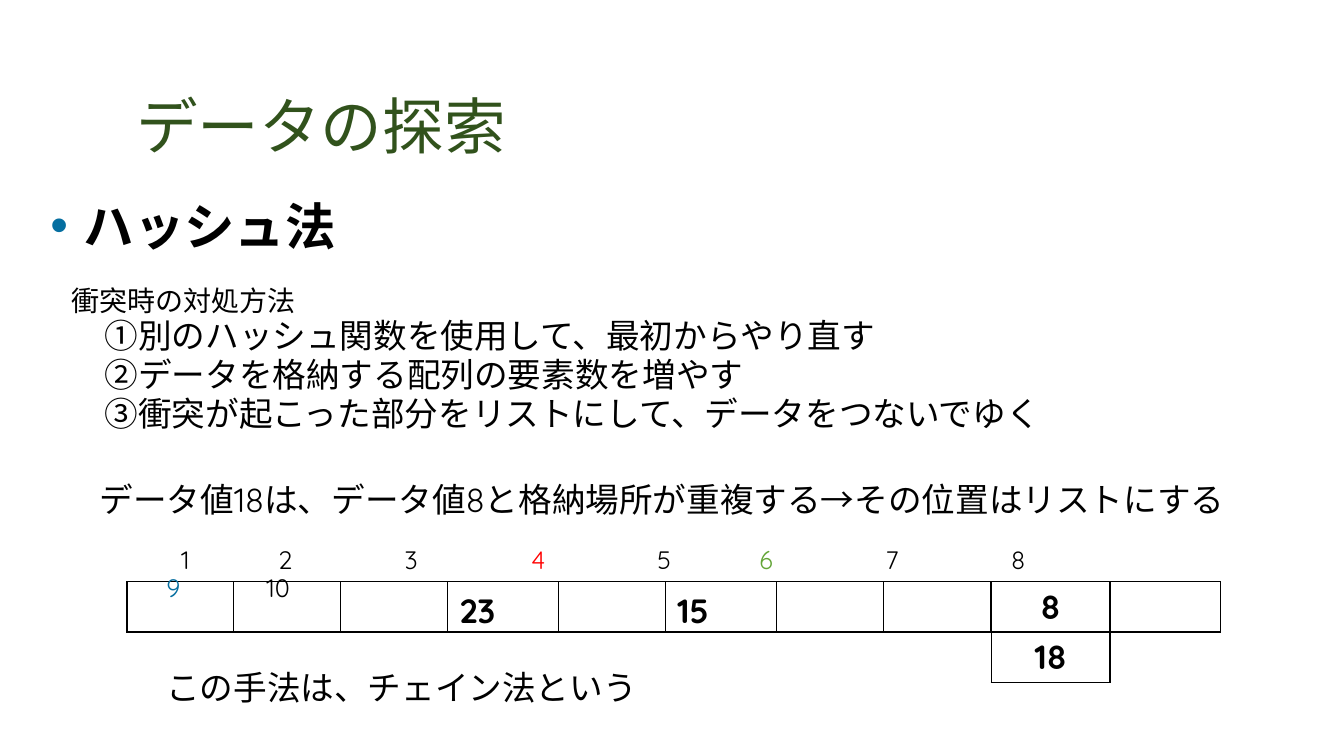
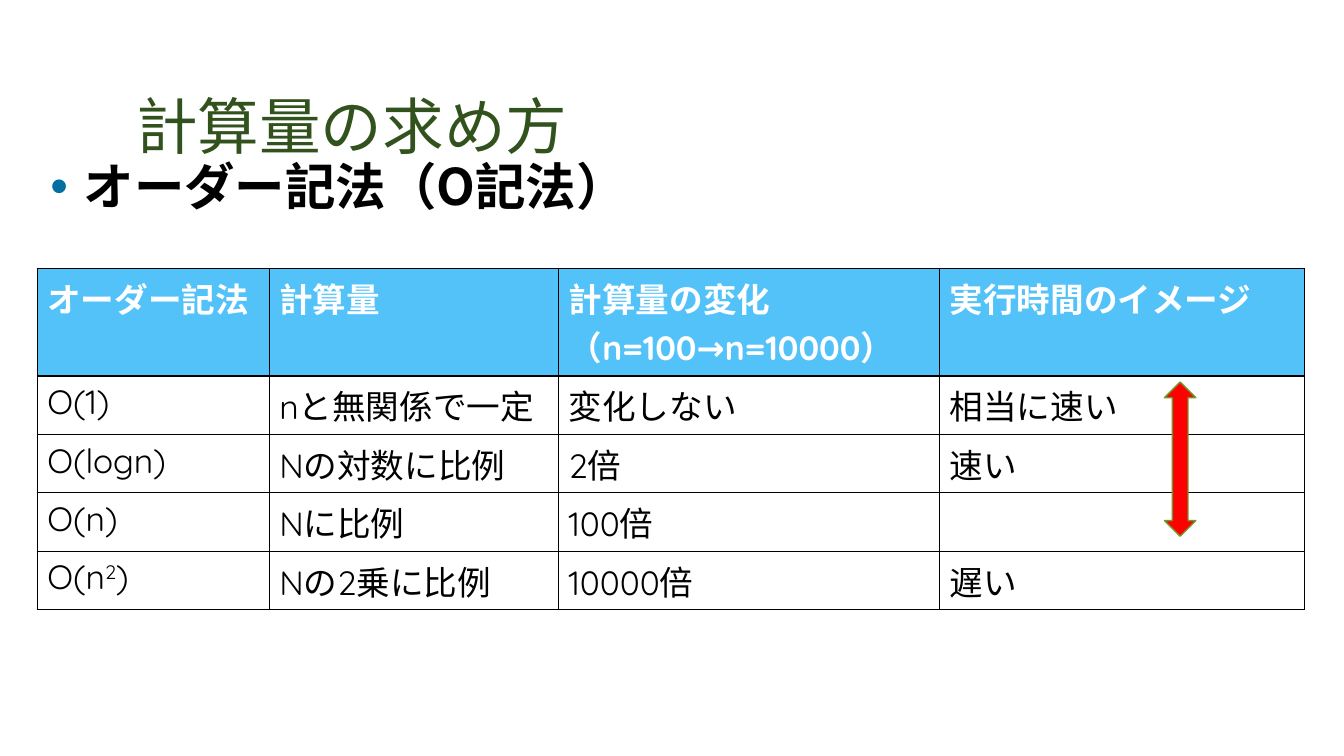
from lxml import etree
from pptx import Presentation
from pptx.dml.color import RGBColor
from pptx.enum.shapes import MSO_SHAPE as SHAPE
from pptx.enum.text import MSO_ANCHOR as ANCHOR, PP_ALIGN as ALIGN
from pptx.oxml.ns import qn
from pptx.util import Inches, Pt

BLACK, WHITE, RED = "000000", "FFFFFF", "FF0000"
TITLE_GREEN, BLUE, GREEN = "31521C", "056EA0", "63A537"
HEADER_BLUE, ARROW_EDGE = "52C2F9", "719629"
SANS, ROUND = "Noto Sans CJK JP", "Quicksand"


def rgb(hex_color):
    return RGBColor.from_string(hex_color)


def style(r, size=24, color=BLACK, bold=False, font=ROUND):
    r.font.size, r.font.bold, r.font.name = Pt(size), bold, font
    r.font.color.rgb = rgb(color)
    etree.SubElement(r._r.get_or_add_rPr(), qn("a:ea"), typeface=SANS)


def add_box(s, x, y, w, h, margins=(0.1, 0.05, 0.1, 0.05)):
    tf = s.shapes.add_textbox(*map(Inches, (x, y, w, h))).text_frame
    tf.word_wrap = True
    (tf.margin_left, tf.margin_top,
     tf.margin_right, tf.margin_bottom) = map(Inches, margins)
    return tf


def add_lines(s, x, y, w, h, lines):
    """Place lines given as (text, size, left indent)."""
    tf = add_box(s, x, y, w, h)
    for i, (text, size, indent) in enumerate(lines):
        p = tf.paragraphs[0] if i == 0 else tf.add_paragraph()
        p.text = text
        p.line_spacing = Pt(27.6)
        p._p.get_or_add_pPr().set("marL", str(Inches(indent)))
        style(p.runs[0], size)


def add_title(s, text):
    tf = add_box(s, 1.22, 0.08, 11.11, 1.53, (0.13, 0.07, 0.13, 0))
    tf.vertical_anchor = ANCHOR.BOTTOM
    tf.text = text
    style(tf.paragraphs[0].runs[0], 44, TITLE_GREEN, font=SANS)


def add_heading(s, text, y, h):
    tf = add_box(s, 0.37, y, 12.6, h, (0.13, 0.07, 0.13, 0.07))
    tf.text = text
    p = tf.paragraphs[0]
    p.line_spacing = Pt(43.3)
    style(p.runs[0], 36, bold=True, font=SANS)
    pPr = p._p.get_or_add_pPr()
    pPr.set("marL", str(Inches(0.33)))
    pPr.set("indent", str(-Inches(0.33)))
    color = etree.SubElement(pPr, qn("a:buClr"))
    etree.SubElement(color, qn("a:srgbClr"), val=BLUE)
    etree.SubElement(pPr, qn("a:buFont"), typeface="Arial")
    etree.SubElement(pPr, qn("a:buChar"), char="•")


def add_slide(prs, title, heading, heading_y, heading_h):
    s = prs.slides.add_slide(prs.slide_layouts[6])
    add_title(s, title)
    add_heading(s, heading, heading_y, heading_h)
    return s


def set_borders(cell):
    tcPr = cell._tc.get_or_add_tcPr()
    for i, side in enumerate(("lnL", "lnR", "lnT", "lnB")):
        ln = etree.Element(qn(f"a:{side}"), w=str(Pt(1)))
        fill = etree.SubElement(ln, qn("a:solidFill"))
        etree.SubElement(fill, qn("a:srgbClr"), val=BLACK)
        tcPr.insert(i, ln)


def add_grid(s, x, y, cols, rows):
    """Add an unfilled table with thin black borders."""
    table = s.shapes.add_table(len(rows), len(cols), Inches(x), Inches(y),
                               Inches(sum(cols)), Inches(sum(rows))).table
    table.first_row = table.horz_banding = False
    for col, width in zip(table.columns, cols):
        col.width = Inches(width)
    for row, height in zip(table.rows, rows):
        row.height = Inches(height)
    for cell in table.iter_cells():
        cell.fill.background()
        set_borders(cell)
    return table


def add_slots(s, x, y, cols, values, left_aligned=()):
    """Draw a row of array slots; values maps slot index to its content."""
    table = add_grid(s, x, y, cols, [0.5])
    for i in range(len(cols)):
        cell = table.cell(0, i)
        cell.margin_top = cell.margin_bottom = Inches(0.04)
        if i not in values:
            continue
        cell.text = values[i]
        p = cell.text_frame.paragraphs[0]
        p.alignment = ALIGN.CENTER
        style(p.runs[0], bold=True)
        if i in left_aligned:
            p.alignment = ALIGN.LEFT
            cell.margin_left = Inches(0.12)
            cell.margin_top, cell.margin_bottom = Inches(0.08), 0


def add_slot_numbers(s, x, y, w, h):
    tf = add_box(s, x, y, w, h)
    colors = {4: RED, 6: GREEN, 9: BLUE}
    lines = [(1, [0.19, 1.18, 2.43, 3.69, 4.94, 5.95, 7.2, 8.45]),
             (9, [0.07, 1.11])]
    for first, stops in lines:
        p = tf.paragraphs[0] if first == 1 else tf.add_paragraph()
        p.line_spacing = 0.95
        tabs = etree.SubElement(p._p.get_or_add_pPr(), qn("a:tabLst"))
        for number, stop in enumerate(stops, first):
            etree.SubElement(tabs, qn("a:tab"), pos=str(Inches(stop)), algn="ctr")
            r = p.add_run()
            r.text = f"\t{number}"
            style(r, 18, colors.get(number, BLACK))


def add_order_table(s, x, y):
    rows = [
        ("オーダー記法", "計算量", "計算量の変化\n（n=100→n=10000）", "実行時間のイメージ"),
        ("O(1)", "nと無関係で一定", "変化しない", "相当に速い"),
        ("O(logn)", "Nの対数に比例", "2倍", "速い"),
        ("O(n)", "Nに比例", "100倍", ""),
        ("O(n^2^)", "Nの2乗に比例", "10000倍", "遅い"),
    ]
    table = add_grid(s, x, y, [2.3, 2.87, 3.78, 3.62], [1.07] + [0.58] * 4)
    table.first_row = True
    for i, row in enumerate(rows):
        for j, text in enumerate(row):
            cell = table.cell(i, j)
            if i == 0:
                cell.fill.solid()
                cell.fill.fore_color.rgb = rgb(HEADER_BLUE)
            if text:
                fill_cell(cell.text_frame, text, header=i == 0)


def fill_cell(tf, text, header):
    """Write text whose parts between carets are superscript."""
    for n, line in enumerate(text.split("\n")):
        p = tf.paragraphs[0] if n == 0 else tf.add_paragraph()
        for k, part in enumerate(line.split("^")):
            r = p.add_run()
            r.text = part
            style(r, color=WHITE if header else BLACK, bold=header)
            if k % 2:
                r._r.get_or_add_rPr().set("baseline", "30000")


def add_speed_arrow(s, x, y, w, h):
    sp = s.shapes.add_shape(SHAPE.UP_DOWN_ARROW, *map(Inches, (x, y, w, h)))
    sp.shadow.inherit = False
    sp.fill.solid()
    sp.fill.fore_color.rgb = rgb(RED)
    sp.line.color.rgb = rgb(ARROW_EDGE)
    sp.line.width = Pt(1)


def build_hash_slide(prs):
    s = add_slide(prs, "データの探索", "ハッシュ法", 1.86, 0.87)
    add_lines(s, 0.61, 2.71, 11.81, 2.02, [
        ("衝突時の対処方法", 20, 0),
        ("①別のハッシュ関数を使用して、最初からやり直す", 24, 0.33),
        ("②データを格納する配列の要素数を増やす", 24, 0.33),
        ("③衝突が起こった部分をリストにして、データをつないでゆく", 24, 0.33),
    ])
    cols = [1.06, 1.06, 1.06, 1.1, 1.06, 1.1, 1.06, 1.07, 1.18, 1.1]
    x, y, chained = 1.26, 5.77, 8
    add_slots(s, x + sum(cols[:chained]), y + 0.5, [cols[chained]], {0: "18"})
    add_slots(s, x, y, cols, {3: "23", 5: "15", chained: "8"}, left_aligned=(3, 5))
    add_slot_numbers(s, 1.55, 5.37, 10.55, 0.7)
    add_lines(s, 0.89, 4.72, 11.9, 0.48, [
        ("データ値18は、データ値8と格納場所が重複する→その位置はリストにする", 24, 0)])
    add_lines(s, 1.55, 6.58, 5.28, 0.5, [("この手法は、チェイン法という", 24, 0)])


def build_order_slide(prs):
    s = add_slide(prs, "計算量の求め方", "オーダー記法（O記法）", 1.47, 1.38)
    add_order_table(s, 0.37, 2.66)
    add_speed_arrow(s, 11.55, 3.79, 0.31, 1.53)


def main():
    prs = Presentation()
    prs.slide_width, prs.slide_height = Inches(13.33), Inches(7.5)
    build_hash_slide(prs)
    build_order_slide(prs)
    prs.save("out.pptx")


if __name__ == "__main__":
    main()
